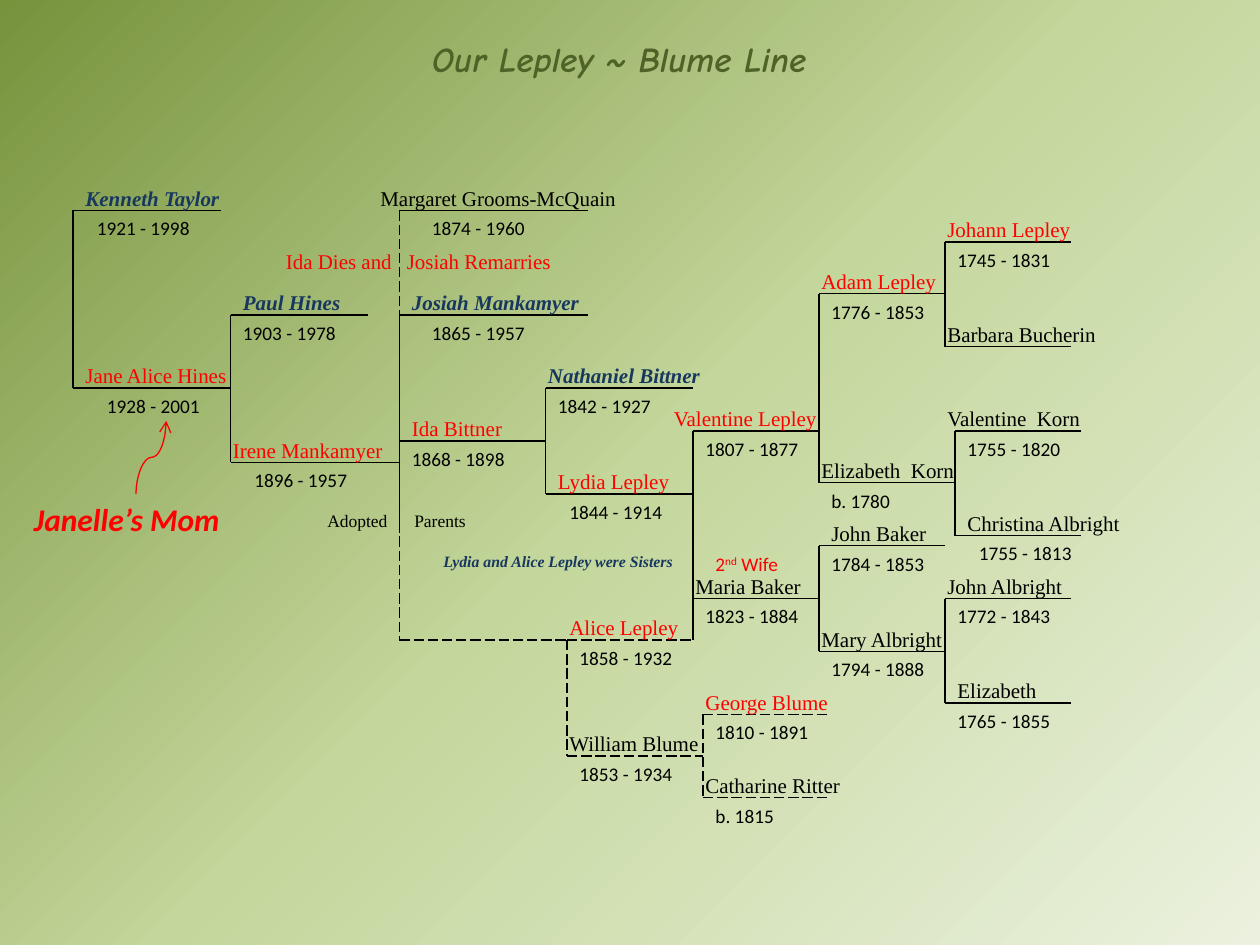
from typing import NamedTuple, Optional

from pptx import Presentation
from pptx.dml.color import RGBColor
from pptx.enum.dml import MSO_LINE
from pptx.enum.shapes import MSO_CONNECTOR
from pptx.enum.text import MSO_AUTO_SIZE
from pptx.oxml import parse_xml
from pptx.oxml.ns import nsdecls, qn
from pptx.shapes.connector import Connector
from pptx.slide import Slide
from pptx.text.text import Font
from pptx.util import Inches, Pt

BLACK = RGBColor(0x00, 0x00, 0x00)
RED = RGBColor(0xFF, 0x00, 0x00)
NAVY = RGBColor(0x17, 0x37, 0x5E)
OLIVE = RGBColor(0x4F, 0x62, 0x28)
SERIF = "Times New Roman"
SANS = "Calibri"
NAME_RISE = 0.25
BACKGROUND_STOPS = ((0, "EBF1DE"), (50, "C3D69B"), (100, "77933C"), (100, "4F6228"))


class Style(NamedTuple):
    size: float
    font: str
    color: RGBColor
    emphasis: bool = False


class Person(NamedTuple):
    name: str
    years: str
    start: float
    end: float
    y: float
    name_left: float
    name_width: float
    years_left: float
    style: Style
    dashed: bool = False


class Branch(NamedTuple):
    x: float
    top: float
    bottom: float
    dashed: bool = False


class Note(NamedTuple):
    text: str
    left: float
    top: float
    width: float
    height: float
    style: Style
    wrap: bool = True
    tab: Optional[float] = None


PLAIN = Style(12, SERIF, BLACK)
LINEAGE = Style(12, SERIF, RED)
HUSBAND = Style(12, SERIF, NAVY, True)
YEARS = Style(11, SANS, BLACK)
WIFE_ORDER = Style(11, SANS, RED)

PEOPLE = (
    Person("Kenneth Taylor", "1921 - 1998", 0.58, 1.75, 1.67, 0.58, 1.28, 0.67, HUSBAND),
    Person("Jane Alice Hines", "1928 - 2001", 0.58, 1.83, 3.08, 0.58, 1.33, 0.75, LINEAGE),
    Person("Paul Hines", "1903 - 1978", 1.83, 2.92, 2.5, 1.83, 1.17, 1.83, HUSBAND),
    Person("Irene Mankamyer", "1896 - 1957", 1.83, 3.17, 3.67, 1.75, 1.42, 1.92, LINEAGE),
    Person("Margaret Grooms-McQuain", "1874 - 1960", 3.17, 4.67, 1.67, 2.92, 2.08, 3.33, PLAIN),
    Person("Josiah Mankamyer", "1865 - 1957", 3.17, 4.67, 2.5, 3.17, 1.58, 3.33, HUSBAND),
    Person("Ida Bittner", "1868 - 1898", 3.17, 4.33, 3.5, 3.17, 1.08, 3.17, LINEAGE),
    Person("Nathaniel Bittner", "1842 - 1927", 4.33, 5.5, 3.08, 4.25, 1.92, 4.33, HUSBAND),
    Person("Lydia Lepley", "1844 - 1914", 4.33, 5.5, 3.92, 4.33, 1.17, 4.42, LINEAGE),
    Person("Alice Lepley", "1858 - 1932", 4.5, 5.5, 5.08, 4.42, 1.08, 4.5, LINEAGE, True),
    Person("William Blume", "1853 - 1934", 4.5, 5.58, 6, 4.42, 1.25, 4.5, PLAIN, True),
    Person("George Blume", "1810 - 1891", 5.58, 6.58, 5.67, 5.5, 1.25, 5.58, LINEAGE, True),
    Person("Catharine Ritter", "b. 1815", 5.58, 6.58, 6.33, 5.5, 1.42, 5.58, PLAIN, True),
    Person("Valentine Lepley", "1807 - 1877", 5.5, 6.5, 3.42, 5.25, 1.42, 5.5, LINEAGE),
    Person("Maria Baker", "1823 - 1884", 5.5, 6.5, 4.75, 5.42, 1.08, 5.5, PLAIN),
    Person("Adam Lepley", "1776 - 1853", 6.5, 7.5, 2.33, 6.42, 1.17, 6.5, LINEAGE),
    Person("Elizabeth  Korn", "b. 1780", 6.5, 7.58, 3.83, 6.42, 1.42, 6.5, PLAIN),
    Person("John Baker", "1784 - 1853", 6.5, 7.5, 4.33, 6.5, 1, 6.5, PLAIN),
    Person("Mary Albright", "1794 - 1888", 6.5, 7.5, 5.17, 6.42, 1.25, 6.5, PLAIN),
    Person("Johann Lepley", "1745 - 1831", 7.5, 8.5, 1.92, 7.42, 1.42, 7.5, LINEAGE),
    Person("Barbara Bucherin", "", 7.5, 8.5, 2.75, 7.42, 1.5, 7.5, PLAIN),
    Person("Valentine  Korn", "1755 - 1820", 7.58, 8.58, 3.42, 7.42, 1.33, 7.58, PLAIN),
    Person("Christina Albright", "1755 - 1813", 7.58, 8.58, 4.25, 7.58, 1.75, 7.67, PLAIN),
    Person("John Albright", "1772 - 1843", 7.5, 8.5, 4.75, 7.42, 1.25, 7.5, PLAIN),
    Person("Elizabeth", "1765 - 1855", 7.5, 8.5, 5.58, 7.5, 1.25, 7.5, PLAIN),
)

BRANCHES = (
    Branch(0.58, 1.67, 3.08),
    Branch(1.83, 2.5, 3.67),
    Branch(3.17, 1.67, 2.5, True),
    Branch(3.17, 2.5, 4.17),
    Branch(3.17, 3.92, 5.08, True),
    Branch(4.33, 3.08, 3.92),
    Branch(4.5, 5.08, 6, True),
    Branch(5.5, 3.42, 5.08),
    Branch(5.58, 5.67, 6.33, True),
    Branch(6.5, 2.33, 3.83),
    Branch(6.5, 4.33, 5.17),
    Branch(7.5, 1.92, 2.75),
    Branch(7.5, 4.75, 5.58),
    Branch(7.58, 3.42, 4.25),
)

NOTES = (
    Note("Our Lepley ~ Blume Line", 3.33, 0.25, 4.42, 0.44, Style(20, "Comic Neue", OLIVE, True)),
    Note("Janelle’s Mom", 0.17, 3.92, 1.69, 0.4, Style(18, SANS, RED, True), wrap=False),
    Note("Ida Dies and\tJosiah Remarries", 2.17, 1.92, 2.42, 0.3, LINEAGE, tab=0.96),
    Note("Adopted\tParents", 2.5, 4, 1.33, 0.27, Style(10, SERIF, BLACK), tab=0.69),
    Note("Lydia and Alice Lepley were Sisters", 3.42, 4.33, 2.08, 0.25, Style(9, SERIF, NAVY, True)),
)


def apply_style(font: Font, style: Style) -> None:
    font.size = Pt(style.size)
    font.name = style.font
    font.color.rgb = style.color
    font.bold = font.italic = style.emphasis


def add_note(slide: Slide, note: Note):
    box = slide.shapes.add_textbox(
        Inches(note.left), Inches(note.top), Inches(note.width), Inches(note.height)
    )
    frame = box.text_frame
    frame.text = note.text
    frame.word_wrap = note.wrap
    frame.auto_size = MSO_AUTO_SIZE.SHAPE_TO_FIT_TEXT
    paragraph = frame.paragraphs[0]
    for run in paragraph.runs:
        apply_style(run.font, note.style)
    if note.tab is not None:
        paragraph._p.get_or_add_pPr().append(parse_xml(
            f'<a:tabLst {nsdecls("a")}><a:tab pos="{Inches(note.tab)}" algn="l"/></a:tabLst>'
        ))
    return paragraph


def add_line(
    slide: Slide, x1: float, y1: float, x2: float, y2: float, dashed: bool = False,
    color: RGBColor = BLACK, kind: MSO_CONNECTOR = MSO_CONNECTOR.STRAIGHT,
) -> Connector:
    connector = slide.shapes.add_connector(kind, Inches(x1), Inches(y1), Inches(x2), Inches(y2))
    connector.line.color.rgb = color
    connector.line.width = Pt(0.75)
    if dashed:
        connector.line.dash_style = MSO_LINE.LONG_DASH
    connector.element.spPr.append(parse_xml(f'<a:effectLst {nsdecls("a")}/>'))
    return connector


def add_person(slide: Slide, person: Person) -> None:
    add_line(slide, person.start, person.y, person.end, person.y, person.dashed)
    add_note(slide, Note(person.name, person.name_left, person.y - NAME_RISE,
                         person.name_width, 0.3, person.style))
    if person.years:
        add_note(slide, Note(person.years, person.years_left, person.y, 1, 0.29, YEARS))


def add_mom_arrow(slide: Slide) -> None:
    arrow = add_line(slide, 1.49, 3.75, 0.91, 3.51, color=RED, kind=MSO_CONNECTOR.CURVE)
    properties = arrow.element.spPr
    properties.find(qn("a:xfrm")).set("rot", "5400000")
    properties.find(qn("a:ln")).append(parse_xml(f'<a:tailEnd {nsdecls("a")} type="arrow"/>'))


def add_second_wife(slide: Slide) -> None:
    paragraph = add_note(slide, Note("2", 5.58, 4.33, 0.83, 0.29, WIFE_ORDER))
    for text, baseline in (("nd", "30000"), (" Wife", "0")):
        run = paragraph.add_run()
        run.text = text
        apply_style(run.font, WIFE_ORDER)
        run._r.get_or_add_rPr().set("baseline", baseline)


def paint_background(slide: Slide) -> None:
    slide.background.fill.gradient()
    default = next(slide.element.iter(qn("a:gradFill")))
    stops = "".join(
        f'<a:gs pos="{position * 1000}"><a:srgbClr val="{color}"/></a:gs>'
        for position, color in BACKGROUND_STOPS
    )
    default.getparent().replace(default, parse_xml(
        f'<a:gradFill {nsdecls("a")}><a:gsLst>{stops}</a:gsLst><a:path path="circle">'
        '<a:fillToRect l="100000" t="100000"/></a:path>'
        '<a:tileRect r="-100000" b="-100000"/></a:gradFill>'
    ))


def main() -> None:
    presentation = Presentation()
    presentation.slide_width, presentation.slide_height = Inches(10), Inches(7.5)
    slide = presentation.slides.add_slide(presentation.slide_layouts[6])
    paint_background(slide)
    for branch in BRANCHES:
        add_line(slide, branch.x, branch.top, branch.x, branch.bottom, branch.dashed)
    add_line(slide, 3.17, 5.08, 4.5, 5.08, dashed=True)
    for person in PEOPLE:
        add_person(slide, person)
    for note in NOTES:
        add_note(slide, note)
    add_second_wife(slide)
    add_mom_arrow(slide)
    presentation.save("out.pptx")


if __name__ == "__main__":
    main()
